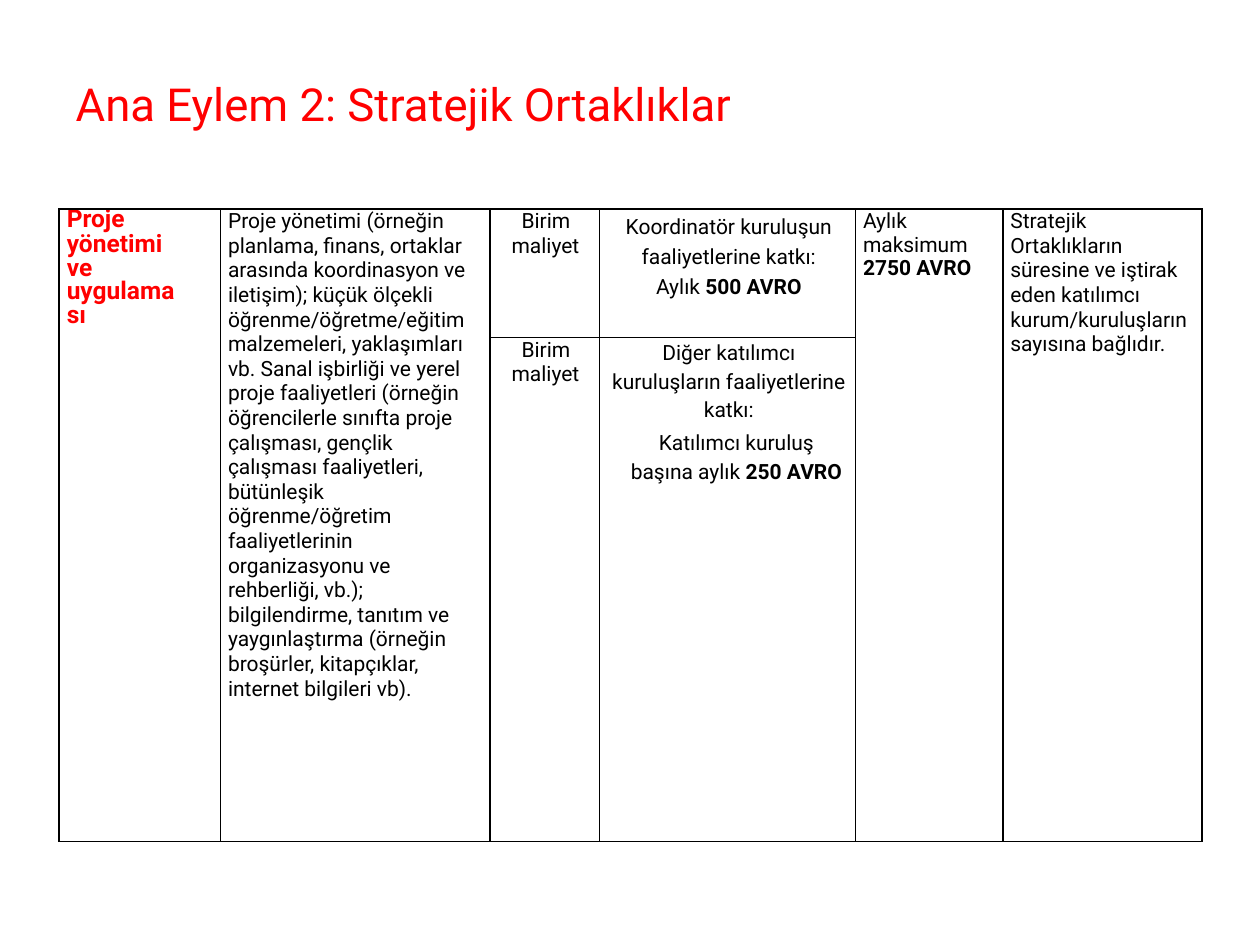
from dataclasses import dataclass

from lxml.etree import SubElement
from pptx import Presentation
from pptx.dml.color import RGBColor
from pptx.enum.text import PP_ALIGN
from pptx.oxml.ns import qn
from pptx.util import Inches, Pt


@dataclass(frozen=True)
class Theme:
    font: str = "Roboto"
    red: str = "FF0000"
    ink: str = "000000"
    title: float = 26
    head: float = 14
    body: float = 12
    line: float = 1


THEME = Theme()
COLS = (1.28, 2.14, 0.87, 2.03, 1.17, 1.58)
ROWS = (1.02, 2.92)


def say(frame, text, size=THEME.body, color=THEME.ink, bold=False, tail="",
        left=0.06, first=0, lead=None, before=None, align=None, more=False):
    """Write one paragraph; tail is its bold ending."""
    para = frame.add_paragraph() if more else frame.paragraphs[0]
    props = para._p.get_or_add_pPr()
    props.set("marL", str(Inches(left)))
    props.set("indent", str(Inches(first)))
    para.alignment = align
    para.line_spacing = lead
    para.space_before = before
    for part, heavy in ((text, bold), (tail, True)):
        if part:
            run = para.add_run()
            run.text = part
            font = run.font
            font.name, font.size, font.bold = THEME.font, Pt(size), heavy
            font.color.rgb = RGBColor.from_string(color)


def add_title(slide, text):
    box = slide.shapes.add_textbox(
        Inches(0.59), Inches(0.6), Inches(5.32), Inches(0.39))
    frame = box.text_frame
    frame.word_wrap = True
    frame.margin_left = frame.margin_right = 0
    frame.margin_top = frame.margin_bottom = 0
    say(frame, text, size=THEME.title, color=THEME.red, left=0.01)


def frame_cell(cell):
    """Clear margins and fill, and draw all four borders."""
    cell.margin_left = cell.margin_right = 0
    cell.margin_top = cell.margin_bottom = 0
    props = cell._tc.get_or_add_tcPr()
    for side in ("lnL", "lnR", "lnT", "lnB"):
        line = SubElement(props, qn(f"a:{side}"), w=str(Pt(THEME.line)))
        fill = SubElement(line, qn("a:solidFill"))
        SubElement(fill, qn("a:srgbClr"), val=THEME.ink)
    cell.fill.background()


def add_grid(slide):
    shape = slide.shapes.add_table(
        len(ROWS), len(COLS), Inches(0.47), Inches(1.66),
        Inches(sum(COLS)), Inches(sum(ROWS)))
    table = shape.table
    table.first_row = table.horz_banding = False
    for col, width in zip(table.columns, COLS):
        col.width = Inches(width)
    for row, height in zip(table.rows, ROWS):
        row.height = Inches(height)
    for cell in table.iter_cells():
        frame_cell(cell)
    for col in (0, 1, 4, 5):
        table.cell(0, col).merge(table.cell(1, col))
    return table


def fill_grid(table):
    def pick(row, col, right=0):
        cell = table.cell(row, col)
        cell.margin_right = Inches(right)
        return cell.text_frame

    # Topic
    topic = pick(0, 0, right=0.3)
    look = dict(size=THEME.head, color=THEME.red, bold=True)
    say(topic, "Proje yönetimi ve", lead=Pt(14), **look)
    say(topic, "uygulaması", lead=Pt(13.3), more=True, **look)

    # Scope
    say(pick(0, 1, right=0.1),
        "Proje yönetimi (örneğin planlama, finans, ortaklar arasında "
        "koordinasyon ve iletişim); küçük ölçekli öğrenme/öğretme/eğitim "
        "malzemeleri, yaklaşımları vb. Sanal işbirliği ve yerel proje "
        "faaliyetleri (örneğin öğrencilerle sınıfta proje çalışması, "
        "gençlik çalışması faaliyetleri, bütünleşik öğrenme/öğretim "
        "faaliyetlerinin organizasyonu ve rehberliği, vb.); bilgilendirme, "
        "tanıtım ve yaygınlaştırma (örneğin broşürler, kitapçıklar, "
        "internet bilgileri vb).")

    # Cost type
    for row in range(len(ROWS)):
        say(pick(row, 2), "Birim maliyet", left=0.17, first=0.08, lead=Pt(14))

    # Grants
    mid = PP_ALIGN.CENTER
    say(pick(0, 3, right=0.17),
        "Koordinatör kuruluşun faaliyetlerine katkı: Aylık ",
        tail="500 AVRO", left=0.19, lead=1.22, align=mid)
    other = pick(1, 3, right=0.07)
    say(other, "Diğer katılımcı kuruluşların faaliyetlerine katkı:",
        left=0.09, lead=1.15, align=mid)
    say(other, "Katılımcı kuruluş başına aylık ", tail="250 AVRO",
        left=0.21, lead=1.15, before=Pt(3), align=mid, more=True)

    # Limit and basis
    say(pick(0, 4), "Aylık maksimum ", tail="2750 AVRO", lead=0.97)
    say(pick(0, 5, right=0.1),
        "Stratejik Ortaklıkların süresine ve iştirak eden katılımcı "
        "kurum/kuruluşların sayısına bağlıdır.")


def main():
    deck = Presentation()
    deck.slide_width, deck.slide_height = Inches(10), Inches(7.5)
    slide = deck.slides.add_slide(deck.slide_layouts[6])
    add_title(slide, "Ana Eylem 2: Stratejik Ortaklıklar")
    fill_grid(add_grid(slide))
    deck.save("out.pptx")


if __name__ == "__main__":
    main()
